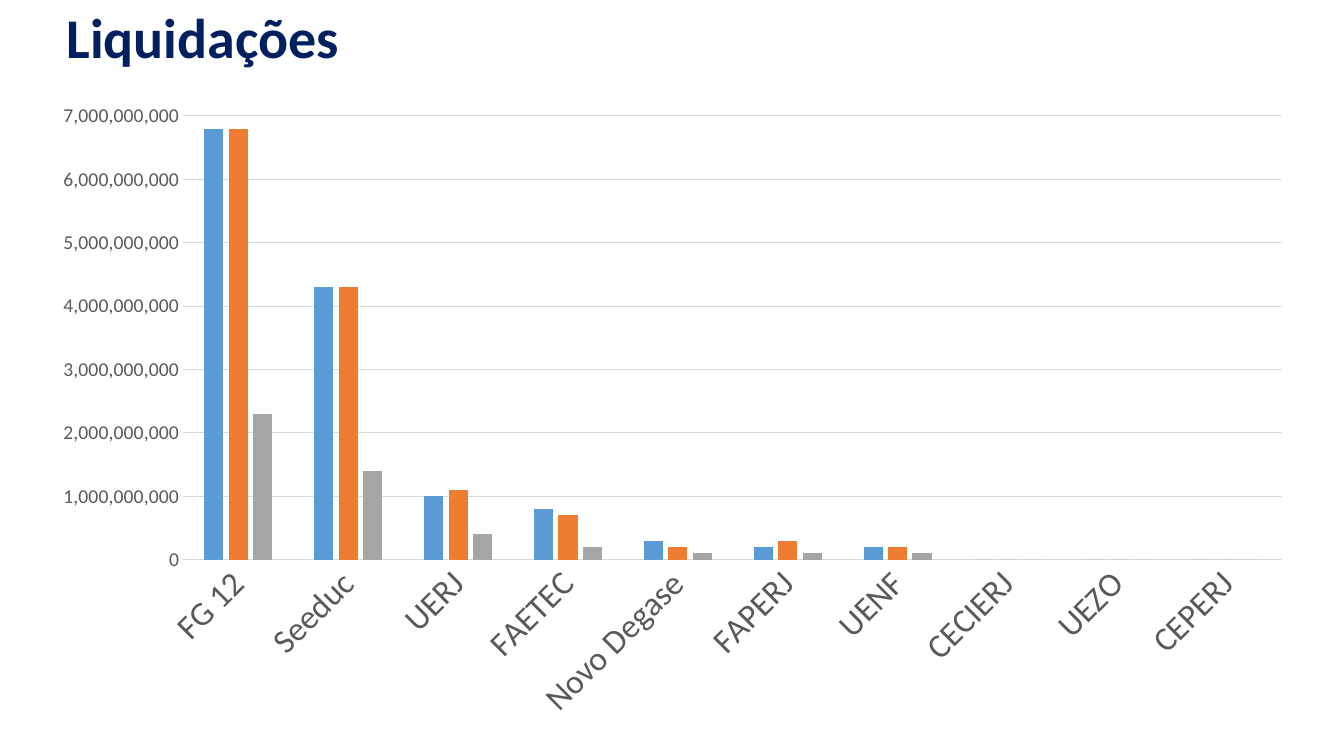
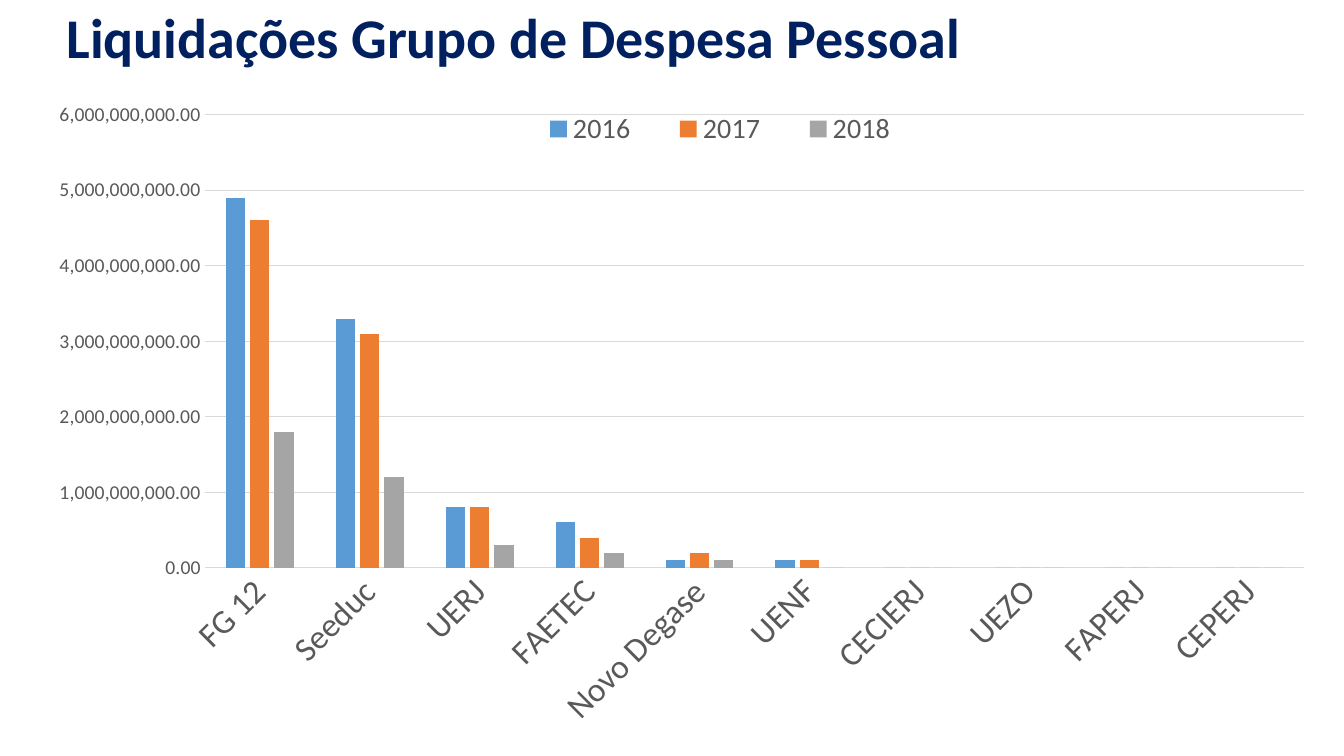
from dataclasses import dataclass

from lxml.etree import SubElement
from pptx import Presentation
from pptx.chart.data import CategoryChartData
from pptx.dml.color import RGBColor
from pptx.enum.chart import XL_CHART_TYPE, XL_LEGEND_POSITION, XL_TICK_MARK
from pptx.enum.text import MSO_ANCHOR, MSO_AUTO_SIZE, PP_ALIGN
from pptx.oxml import parse_xml
from pptx.oxml.ns import nsdecls, qn
from pptx.util import Cm, Pt


@dataclass(frozen=True)
class Theme:
    font: str = "Calibri"
    navy: RGBColor = RGBColor(0x00, 0x20, 0x60)
    label_gray: RGBColor = RGBColor(0x59, 0x59, 0x59)
    grid_gray: RGBColor = RGBColor(0xD9, 0xD9, 0xD9)
    year_colors: tuple = (
        RGBColor(0x5B, 0x9B, 0xD5),
        RGBColor(0xED, 0x7D, 0x31),
        RGBColor(0xA5, 0xA5, 0xA5),
    )
    title_size: Pt = Pt(40)
    category_size: Pt = Pt(24)
    legend_size: Pt = Pt(20)
    value_size: Pt = Pt(14)
    grid_width: Pt = Pt(0.75)


THEME = Theme()
YEARS = ("2016", "2017", "2018")
HUNDRED_MILLION = 100_000_000
BILLION = 10 * HUNDRED_MILLION

# Boxes are left, top, width, height in cm; spending is in hundreds of millions.
SLIDES = (
    {
        "title": "Liquidações",
        "frame": (0.97, 2.26, 32, 16.79),
        "plot": (4.62, 2.92, 27.7, 11.19),
        "legend": None,
        "maximum": 7 * BILLION,
        "number_format": "#,##0",
        "spending": {
            "FG 12": (68, 68, 23),
            "Seeduc": (43, 43, 14),
            "UERJ": (10, 11, 4),
            "FAETEC": (8, 7, 2),
            "Novo Degase": (3, 2, 1),
            "FAPERJ": (2, 3, 1),
            "UENF": (2, 2, 1),
            "CECIERJ": (0, 0, 0),
            "UEZO": (0, 0, 0),
            "CEPERJ": (0, 0, 0),
        },
    },
    {
        "title": "Liquidações Grupo de Despesa Pessoal",
        "frame": (0.84, 2.21, 32.66, 16.84),
        "plot": (5.16, 2.89, 27.71, 11.42),
        "legend": (12.85, 2.75, 10.6, 1),
        "maximum": 6 * BILLION,
        "number_format": "#,##0.00",
        "spending": {
            "FG 12": (49, 46, 18),
            "Seeduc": (33, 31, 12),
            "UERJ": (8, 8, 3),
            "FAETEC": (6, 4, 2),
            "Novo Degase": (1, 2, 1),
            "UENF": (1, 1, 0),
            "CECIERJ": (0, 0, 0),
            "UEZO": (0, 0, 0),
            "FAPERJ": (0, 0, 0),
            "CEPERJ": (0, 0, 0),
        },
    },
)


def set_all(target, values):
    for name, value in values.items():
        setattr(target, name, value)


def format_font(font, size, color, bold=False):
    set_all(font, {"name": THEME.font, "size": size, "bold": bold})
    font.color.rgb = color


def format_line(line):
    line.color.rgb = THEME.grid_gray
    line.width = THEME.grid_width


def add_title(slide, text):
    title = slide.shapes.title
    set_all(title, {"left": Cm(1.42), "top": Cm(0), "width": Cm(29.21), "height": Cm(2.02)})
    frame = title.text_frame
    set_all(frame, {
        "text": text,
        "word_wrap": True,
        "auto_size": MSO_AUTO_SIZE.NONE,
        "vertical_anchor": MSO_ANCHOR.MIDDLE,
    })
    paragraph = frame.paragraphs[0]
    set_all(paragraph, {"alignment": PP_ALIGN.LEFT, "line_spacing": 0.9})
    format_font(paragraph.runs[0].font, THEME.title_size, THEME.navy, bold=True)


def place_in_chart(part, position, box, frame, inner=False):
    """Fix a chart part at a slide box by a manual layout, as child number position."""
    for old_layout in part.findall(qn("c:layout")):
        part.remove(old_layout)
    layout = parse_xml(f"<c:layout {nsdecls('c')}><c:manualLayout/></c:layout>")
    left, top, width, height = box
    frame_left, frame_top, frame_width, frame_height = frame
    settings = {"layoutTarget": "inner"} if inner else {}
    settings |= {
        "xMode": "edge",
        "yMode": "edge",
        "x": (left - frame_left) / frame_width,
        "y": (top - frame_top) / frame_height,
        "w": width / frame_width,
        "h": height / frame_height,
    }
    for tag, value in settings.items():
        SubElement(layout[0], qn(f"c:{tag}")).set("val", str(value))
    part.insert(position, layout)


def format_axes(chart, maximum, number_format):
    no_ticks = {"major_tick_mark": XL_TICK_MARK.NONE, "minor_tick_mark": XL_TICK_MARK.NONE}

    categories = chart.category_axis
    set_all(categories, no_ticks)
    format_line(categories.format.line)
    format_font(categories.tick_labels.font, THEME.category_size, THEME.label_gray)
    label_body = categories._element.find(qn("c:txPr")).find(qn("a:bodyPr"))
    label_body.set("rot", str(-45 * 60000))

    values = chart.value_axis
    set_all(values, no_ticks | {
        "minimum_scale": 0,
        "maximum_scale": maximum,
        "major_unit": BILLION,
        "has_major_gridlines": True,
    })
    values.format.line.fill.background()
    format_line(values.major_gridlines.format.line)
    set_all(values.tick_labels, {"number_format": number_format, "number_format_is_linked": False})
    format_font(values.tick_labels.font, THEME.value_size, THEME.label_gray)


def add_legend(chart, box, frame):
    chart.has_legend = True
    legend = chart.legend
    set_all(legend, {"position": XL_LEGEND_POSITION.BOTTOM, "include_in_layout": False})
    format_font(legend.font, THEME.legend_size, THEME.label_gray)
    place_in_chart(legend._element, 1, box, frame)


def add_spending_chart(slide, content):
    spending = content["spending"]
    frame = content["frame"]
    data = CategoryChartData(number_format=content["number_format"])
    data.categories = list(spending)
    for year, amounts in zip(YEARS, zip(*spending.values())):
        data.add_series(year, [amount * HUNDRED_MILLION for amount in amounts])
    chart = slide.shapes.add_chart(
        XL_CHART_TYPE.COLUMN_CLUSTERED, *map(Cm, frame), data
    ).chart
    set_all(chart, {"has_title": False, "has_legend": False})
    format_font(chart.font, THEME.value_size, THEME.label_gray)

    columns = chart.plots[0]
    set_all(columns, {"gap_width": 219, "overlap": -27, "vary_by_categories": False})
    for series, color in zip(columns.series, THEME.year_colors):
        series.format.fill.solid()
        series.format.fill.fore_color.rgb = color

    format_axes(chart, content["maximum"], content["number_format"])
    place_in_chart(chart._chartSpace.chart.plotArea, 0, content["plot"], frame, inner=True)
    if content["legend"]:
        add_legend(chart, content["legend"], frame)


def main():
    presentation = Presentation()
    set_all(presentation, {"slide_width": Cm(33.87), "slide_height": Cm(19.05)})
    title_only = presentation.slide_layouts[5]
    for content in SLIDES:
        slide = presentation.slides.add_slide(title_only)
        add_spending_chart(slide, content)
        add_title(slide, content["title"])
    presentation.save("out.pptx")


if __name__ == "__main__":
    main()
